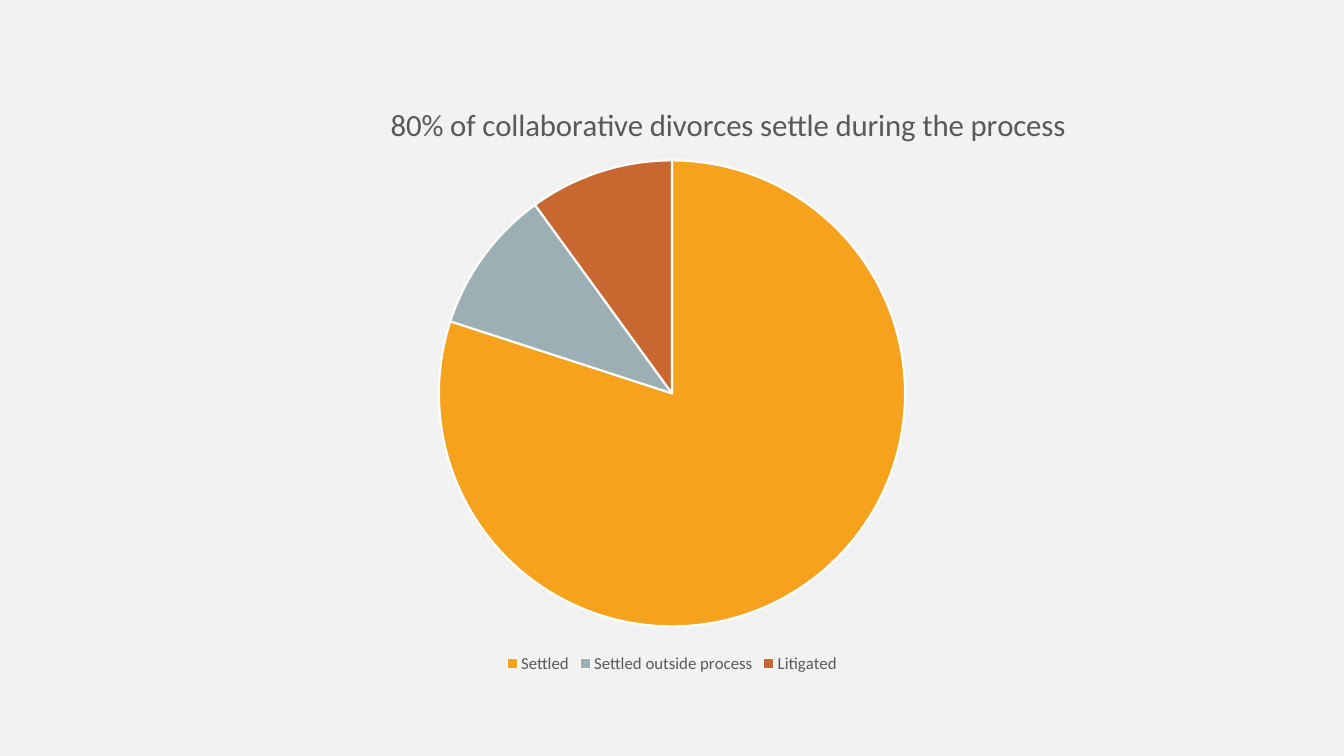
from lxml import etree
from pptx import Presentation
from pptx.chart import data as chart_data
from pptx.dml.color import RGBColor
from pptx.enum import chart as chart_enum
from pptx.util import Inches, Pt

BACKGROUND = RGBColor(0xF2, 0xF2, 0xF2)
GREY = RGBColor(0x59, 0x59, 0x59)
WHITE = RGBColor(0xFF, 0xFF, 0xFF)
ORANGE = RGBColor(0xF6, 0xA2, 0x1D)
BLUE_GREY = RGBColor(0x9B, 0xAF, 0xB5)
RUST = RGBColor(0xC9, 0x67, 0x31)

FONT = "Calibri"
TITLE = "80% of collaborative divorces settle during the process"
OUTCOMES = [
    ("Settled", 80, ORANGE),
    ("Settled outside process", 10, BLUE_GREY),
    ("Litigated", 10, RUST),
]
CHART_NS = "http://schemas.openxmlformats.org/drawingml/2006/chart"


def tag(name):
    return f"{{{CHART_NS}}}{name}"


def format_font(font, size, color):
    font.name = FONT
    font.size = Pt(size)
    font.color.rgb = color
    font.bold = False


def set_layout(parent, index, **settings):
    for existing in parent.findall(tag("layout")):
        parent.remove(existing)
    layout = etree.Element(tag("layout"))
    manual = etree.SubElement(layout, tag("manualLayout"))
    for name, value in settings.items():
        etree.SubElement(manual, tag(name), val=str(value))
    parent.insert(index, layout)


def add_title(chart, content, **font_format):
    title = chart.chart_title
    para = title.text_frame.paragraphs[0]
    span = para.add_run()
    span.text = content
    format_font(span.font, **font_format)
    title.include_in_layout = False
    set_layout(title.element, 1, xMode="edge", yMode="edge", x=0.18, y=0.03)


def add_legend(chart, **font_format):
    chart.has_legend = True
    legend = chart.legend
    legend.position = chart_enum.XL_LEGEND_POSITION.BOTTOM
    legend.include_in_layout = False
    format_font(legend.font, **font_format)


def color_slices(series, colors):
    for index, color in enumerate(colors):
        slice_format = series.points[index].format
        slice_format.fill.solid()
        slice_format.fill.fore_color.rgb = color
        slice_format.line.color.rgb = WHITE
        slice_format.line.width = Pt(1.5)


def add_pie(page, outcomes):
    names, values, colors = zip(*outcomes)
    table = chart_data.CategoryChartData()
    table.categories = names
    table.add_series("Series 1", values)
    chart = page.shapes.add_chart(
        chart_enum.XL_CHART_TYPE.PIE,
        Inches(2.22), Inches(0.79), Inches(8.89), Inches(5.93), table,
    ).chart
    chart.font.name = FONT
    chart.font.size = Pt(10)
    chart.plots[0].vary_by_categories = True
    color_slices(chart.plots[0].series[0], colors)
    plot_area = chart.element.find(f".//{tag('plotArea')}")
    set_layout(plot_area, 0, layoutTarget="inner", xMode="edge", yMode="edge",
               x=0.24, y=0.13, w=0.52, h=0.79)
    return chart


def main():
    deck = Presentation()
    deck.slide_width = Inches(13.33)
    deck.slide_height = Inches(7.5)
    page = deck.slides.add_slide(deck.slide_layouts[6])
    page.background.fill.solid()
    page.background.fill.fore_color.rgb = BACKGROUND
    chart = add_pie(page, OUTCOMES)
    add_title(chart, TITLE, size=22, color=GREY)
    add_legend(chart, size=12, color=GREY)
    deck.save("out.pptx")


if __name__ == "__main__":
    main()
